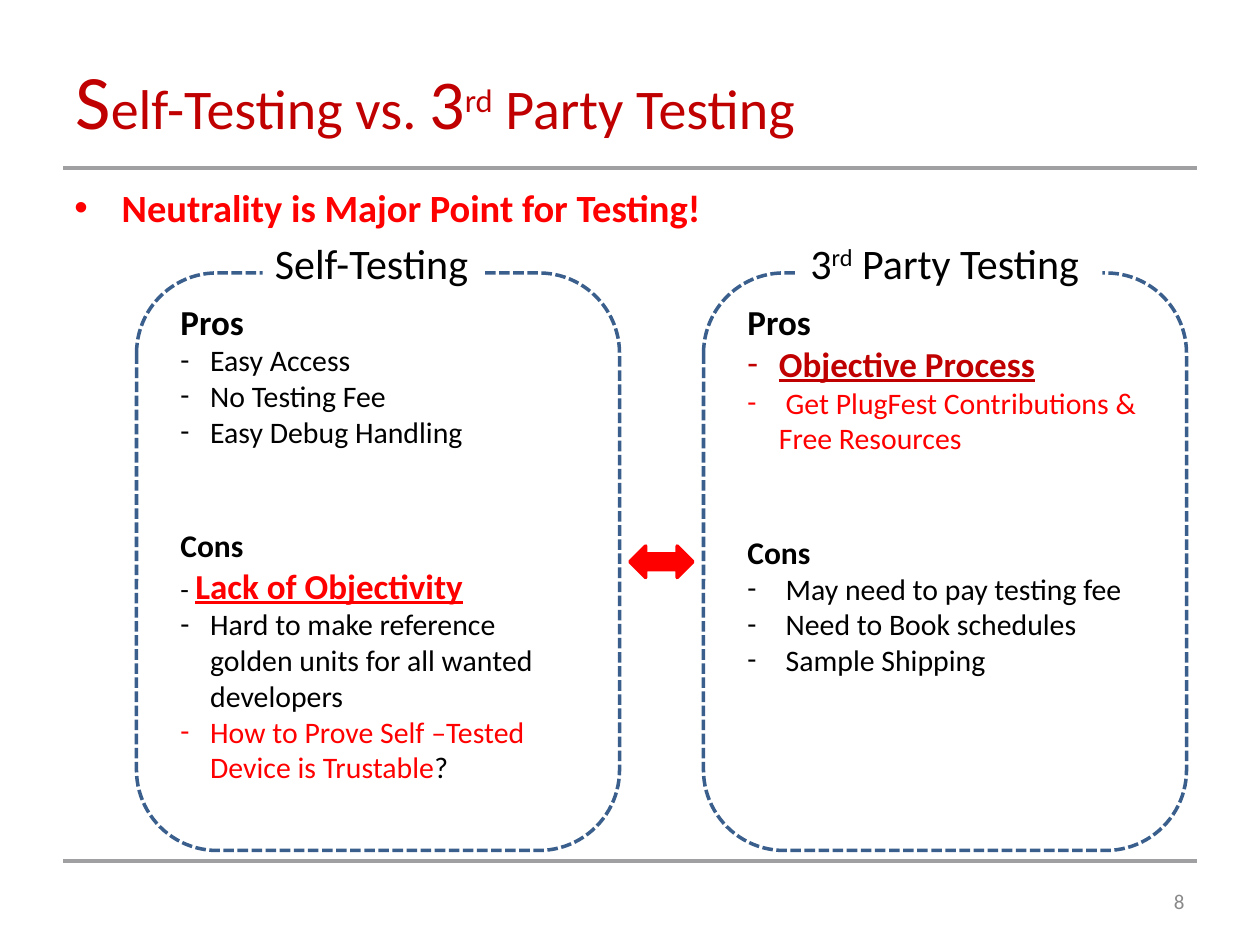
from lxml import etree
from pptx import Presentation
from pptx.dml.color import RGBColor
from pptx.enum.dml import MSO_LINE
from pptx.enum.shapes import MSO_CONNECTOR, MSO_SHAPE
from pptx.enum.text import MSO_ANCHOR, PP_ALIGN
from pptx.oxml.ns import qn
from pptx.util import Pt

DASH = MSO_LINE.SQUARE_DOT
LINE = MSO_CONNECTOR.STRAIGHT
ROUND, RECT, ARROW = (MSO_SHAPE.ROUNDED_RECTANGLE, MSO_SHAPE.RECTANGLE,
                      MSO_SHAPE.LEFT_RIGHT_ARROW)
MIDDLE, RIGHT = MSO_ANCHOR.MIDDLE, PP_ALIGN.RIGHT

FONT = "Calibri"
BLACK, RED, DARK = "000000", "FF0000", "C00000"
GREY, RULE, BLUE, WHITE = "898989", "A0A0A3", "3A5F8C", "FFFFFF"

# A run is (text, size, colour, marks): b bold, u underline, s superscript.
# A paragraph is (runs, bullet, space before).
TITLE = [([("S", 44, DARK, ""), ("elf-Testing vs. ", 32, DARK, ""),
           ("3", 40, DARK, ""), ("rd", 32, DARK, "s"),
           (" Party Testing", 32, DARK, "")], "", 0)]
POINT = [([("Neutrality is Major Point for Testing!", 22, RED, "b")], "•", 0)]
PAGE = [([("8", 12, GREY, "")], "", 0)]


def head(text, size, gap=0):
    return [(text, size, BLACK, "b")], "", gap


def item(text, color=BLACK, size=17, marks=""):
    return [(text, size, color, marks)], "-", 0


# Panels: left edge, label left and width, hanging indent, label, body
PANELS = [
    (78, 150, 126, 17,
     [([("Self-Testing", 24, BLACK, "")], "", 0)],
     [head("Pros", 20),
      item("Easy Access"),
      item("No Testing Fee"),
      item("Easy Debug Handling"),
      head("Cons", 18, 44),
      ([("- ", 16, BLACK, ""), ("Lack of Objectivity", 20, RED, "bu")], "", 0),
      item("Hard to make reference golden units for all wanted developers"),
      ([("How to Prove Self –Tested Device is Trustable", 17, RED, ""),
        ("?", 17, BLACK, "")], "-", 0)]),
    (402, 456, 174, 18,
     [([("3", 24, BLACK, ""), ("rd", 24, BLACK, "s"),
        (" Party Testing", 24, BLACK, "")], "", 0)],
     [head("Pros", 20),
      item("Objective Process", DARK, 20, "bu"),
      item(" Get PlugFest Contributions &\vFree Resources", RED),
      head("Cons", 18, 44),
      item(" May need to pay testing fee"),
      item(" Need to Book schedules"),
      item(" Sample Shipping")]),
]

deck = Presentation()
deck.slide_width, deck.slide_height = Pt(720), Pt(540)
slide = deck.slides.add_slide(deck.slide_layouts[6])
shapes = slide.shapes


def rgb(code):
    return RGBColor.from_string(code)


def hang(para, mark, indent):
    """Give the paragraph a bullet and a hanging indent."""
    props = para._p.get_or_add_pPr()
    props.set("marL", str(Pt(indent)))
    props.set("indent", str(-Pt(indent)))
    etree.SubElement(props, qn("a:buFont")).set("typeface", "Arial" if mark == "•" else FONT)
    etree.SubElement(props, qn("a:buChar")).set("char", mark)


def write(frame, paras, indent=0):
    frame.word_wrap = True
    for n, (runs, mark, gap) in enumerate(paras):
        para = frame.add_paragraph() if n else frame.paragraphs[0]
        if mark:
            hang(para, mark, indent)
        if gap:
            para.space_before = Pt(gap)
        for text, size, color, marks in runs:
            first = len(para.runs)
            if len(runs) == 1:
                para.text = text
            else:
                para.add_run().text = text
            for run in para.runs[first:]:
                font = run.font
                font.name, font.size = FONT, Pt(size)
                font.color.rgb = rgb(color)
                font.bold, font.underline = "b" in marks, "u" in marks
                if "s" in marks:
                    run._r.get_or_add_rPr().set("baseline", "30000")


def text(x, y, w, h, paras, indent=0):
    frame = shapes.add_textbox(Pt(x), Pt(y), Pt(w), Pt(h)).text_frame
    write(frame, paras, indent)
    return frame


def shape(kind, x, y, w, h, fill=None, line=None):
    form = shapes.add_shape(kind, Pt(x), Pt(y), Pt(w), Pt(h))
    form.shadow.inherit = False
    if fill:
        form.fill.solid()
        form.fill.fore_color.rgb = rgb(fill)
    else:
        form.fill.background()
    if line:
        form.line.color.rgb, form.line.width = rgb(line), Pt(2)
    else:
        form.line.fill.background()
    return form


def rule(y):
    line = shapes.add_connector(LINE, Pt(36), Pt(y), Pt(684), Pt(y))
    line.line.color.rgb, line.line.width = rgb(RULE), Pt(1.75)
    etree.SubElement(line._element.spPr, qn("a:effectLst"))


for y in (492, 96):
    rule(y)
text(36, 24, 648, 60, TITLE).margin_top = Pt(6)
text(35.5, 101.5, 648, 36, POINT, 27)
page = text(516, 500.5, 168, 28.75, PAGE)
page.vertical_anchor = MIDDLE
page.paragraphs[0].alignment = RIGHT

for left, start, width, indent, label, body in PANELS:
    shape(ROUND, left, 156, 276, 330, line=BLUE).line.dash_style = DASH
    tag = shape(RECT, start, 132, width, 36, fill=WHITE)
    write(tag.text_frame, label)
    tag.text_frame.vertical_anchor = MSO_ANCHOR.TOP
    tag.text_frame.paragraphs[0].alignment = PP_ALIGN.LEFT
    text(left + 18, 168, 240, 264, body, indent)

shape(ARROW, 360, 312, 36, 18, fill=RED, line=RED)

deck.save("out.pptx")
